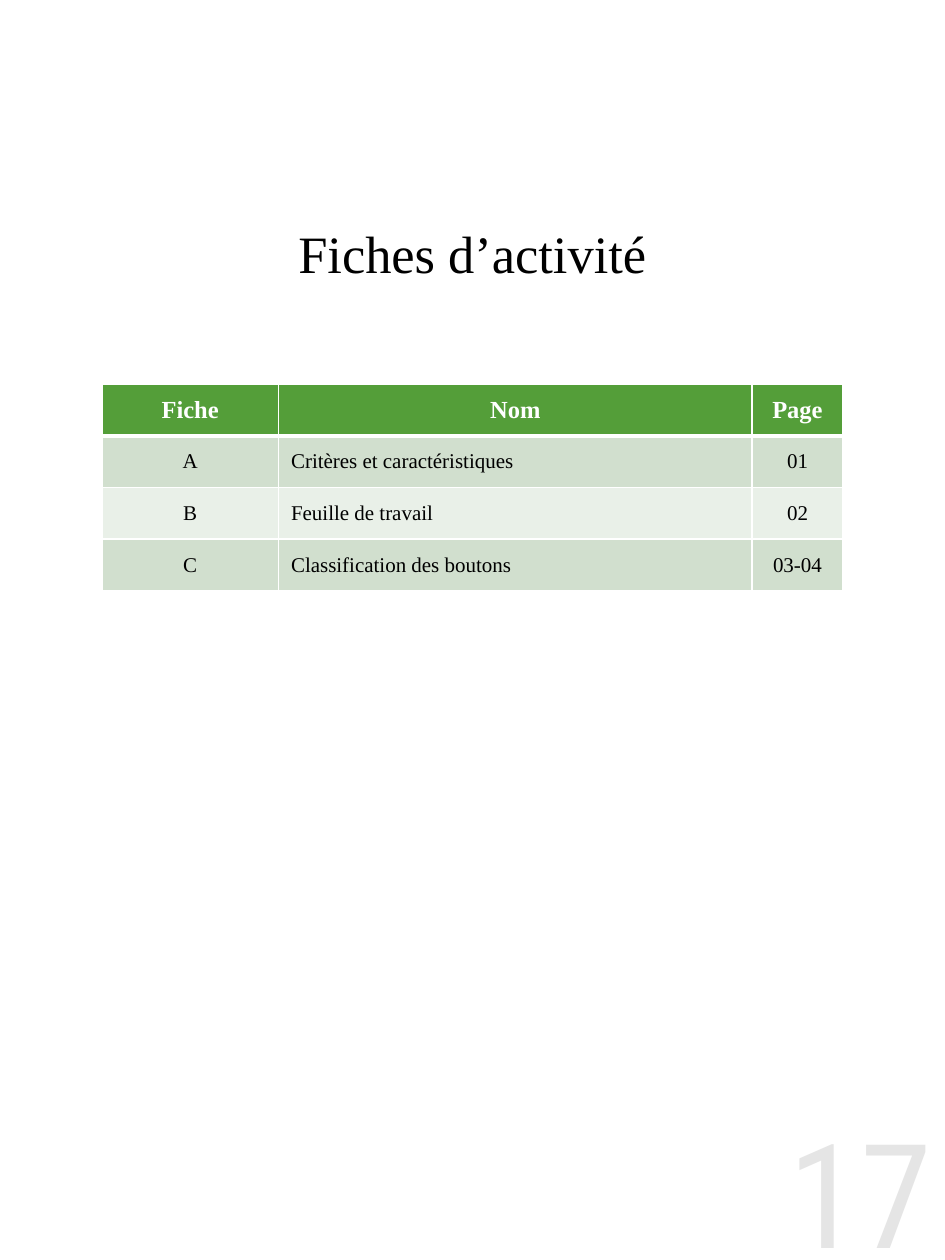
import pptx
import pptx.util
import pptx.dml.color
import pptx.enum.text
import pptx.oxml.ns
from lxml import etree

Inches, Pt = pptx.util.Inches, pptx.util.Pt
RGBColor = pptx.dml.color.RGBColor
ALIGN = pptx.enum.text.PP_ALIGN
ANCHOR = pptx.enum.text.MSO_ANCHOR

WHITE = RGBColor(0xFF, 0xFF, 0xFF)
BLACK = RGBColor(0x00, 0x00, 0x00)
GREEN = RGBColor(0x54, 0x9E, 0x39)
BANDS = [RGBColor(0xD1, 0xDF, 0xCE), RGBColor(0xE9, 0xF0, 0xE8)]
GREY = RGBColor(0xE5, 0xE5, 0xE5)

SERIF = "Times New Roman"
TITLE = {"name": SERIF, "size": Pt(30), "bold": False}
HEADER = {"name": SERIF, "size": Pt(14), "bold": True}
BODY = {"name": SERIF, "size": Pt(12), "bold": False}
NUMBER = {"name": "Roboto Condensed", "size": Pt(83), "bold": False}

COLUMNS = [1.4, 3.76, 0.72]
ROW_HEIGHT = 0.41
ROWS = [
    ["Fiche", "Nom", "Page"],
    ["A", "Critères et caractéristiques", "01"],
    ["B", "Feuille de travail", "02"],
    ["C", "Classification des boutons", "03-04"],
]


class Page:
    """Holds the current slide and its style."""

    def __init__(self, prs):
        self.s = prs.slides.add_slide(prs.slide_layouts[5])

    def add_text(self, tf, text, style, color, align):
        p = tf.paragraphs[0]
        p.alignment = align
        r = p.add_run()
        r.text = text
        for name, value in style.items():
            setattr(r.font, name, value)
        r.font.color.rgb = color

    def title(self, text, left, top, width, height):
        sp = self.s.shapes.title
        box = {"left": left, "top": top, "width": width, "height": height}
        for name, value in box.items():
            setattr(sp, name, Inches(value))
        sp.text_frame.vertical_anchor = ANCHOR.MIDDLE
        self.add_text(sp.text_frame, text, TITLE, BLACK, ALIGN.CENTER)

    def borders(self, cell, **widths):
        tc_pr = cell._tc.get_or_add_tcPr()
        for side in "LRTB":
            ln = etree.SubElement(tc_pr, pptx.oxml.ns.qn(f"a:ln{side}"),
                                  w=str(Pt(widths.get(side, 1))))
            fill = etree.SubElement(ln, pptx.oxml.ns.qn("a:solidFill"))
            etree.SubElement(fill, pptx.oxml.ns.qn("a:srgbClr"), val=str(WHITE))

    def table(self, rows, left, top):
        table = self.s.shapes.add_table(
            len(rows), len(COLUMNS), Inches(left), Inches(top),
            Inches(sum(COLUMNS)), Inches(ROW_HEIGHT * len(rows))).table
        for column, width in zip(table.columns, COLUMNS):
            column.width = Inches(width)
        for i, row in enumerate(rows):
            header = i == 0
            for j, text in enumerate(row):
                cell = table.cell(i, j)
                # A thick line parts the header from the body
                self.borders(cell, T=3 if i == 1 else 1, B=3 if header else 1)
                cell.fill.solid()
                cell.fill.fore_color.rgb = GREEN if header else BANDS[(i - 1) % 2]
                cell.vertical_anchor = ANCHOR.MIDDLE
                self.add_text(cell.text_frame, text, HEADER if header else BODY,
                              WHITE if header else BLACK,
                              ALIGN.LEFT if j == 1 and not header else ALIGN.CENTER)

    def page_number(self, text, left, top, width, height):
        sp = self.s.shapes.add_textbox(Inches(left), Inches(top),
                                       Inches(width), Inches(height))
        tf = sp.text_frame
        for side in ("left", "top", "right", "bottom"):
            setattr(tf, f"margin_{side}", 0)
        tf.word_wrap = False
        tf.vertical_anchor = ANCHOR.TOP
        self.add_text(tf, text, NUMBER, GREY, ALIGN.RIGHT)


def main():
    prs = pptx.Presentation()
    prs.slide_width, prs.slide_height = Inches(7.5), Inches(10)
    page = Page(prs)

    # Heading
    page.title("Fiches d’activité", 0, 1.53, 7.5, 0.95)

    # List of activity sheets
    page.table(ROWS, 0.81, 3.05)

    # Large page number in the corner
    page.page_number("17", 6.2, 8.76, 1.2, 1.24)

    prs.save("out.pptx")


if __name__ == "__main__":
    main()
